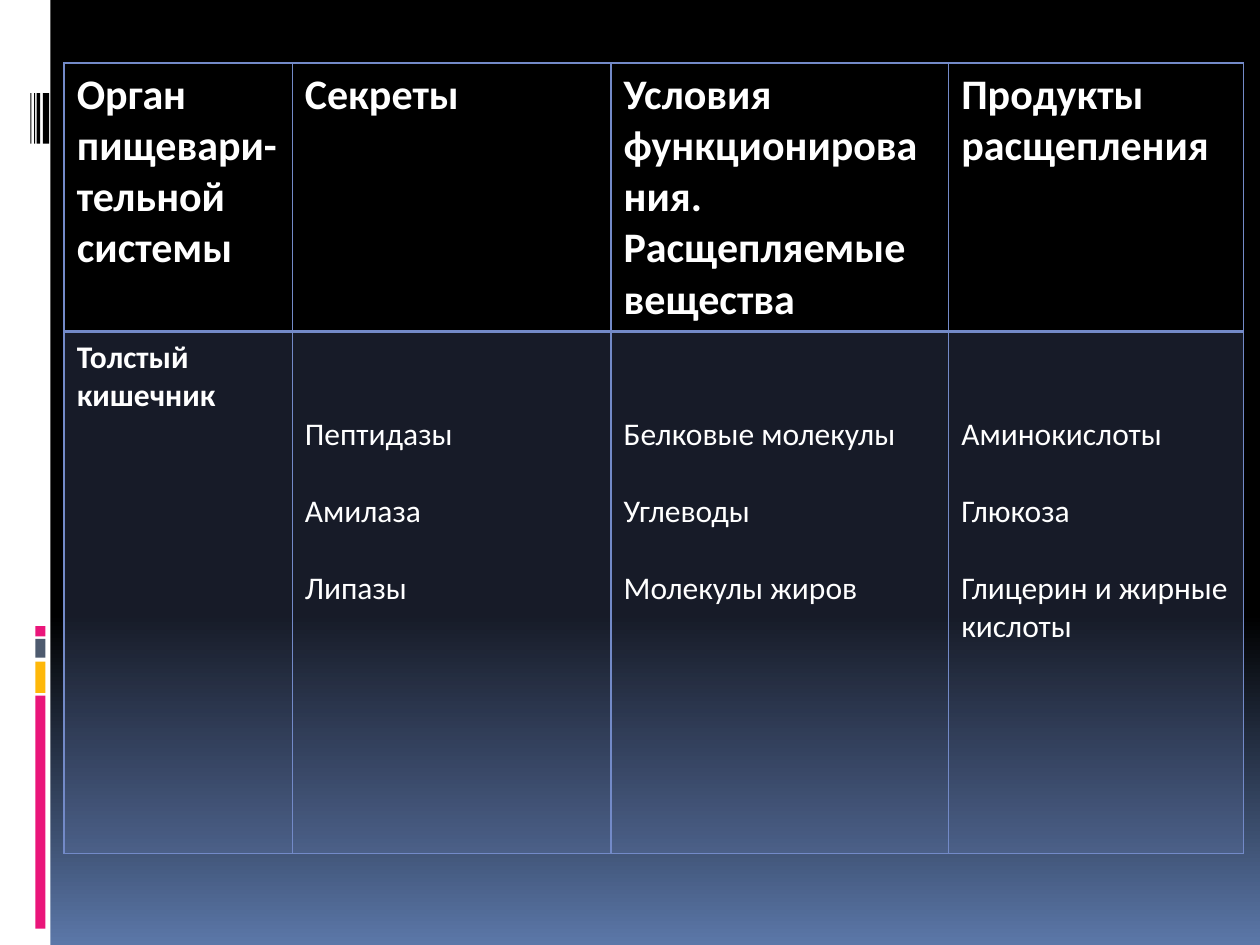
from lxml import etree
from pptx import Presentation
from pptx import util as u
from pptx.dml.color import RGBColor
from pptx.enum import shapes
from pptx.oxml import ns

COLORS = {"white": "FFFFFF", "black": "000000", "pink": "EA157A", "amber": "FEB80A",
          "slate": "4E5B6F", "sky": "5B77A8", "table": "738AC8"}
FONT = "Calibri"
HEADER_SIZE, BODY_SIZE = 24, 18
BODY_LINE = 22  # points taken by one line of body text

STRIPES = [("pink", 55.2, 18.5), ("amber", 52.5, 2.5), ("slate", 50.7, 1.5), ("pink", 49.7, 0.8)]
BARCODE = [(3.4, 0.5), (2.9, 0.3), (2.7, 0.1), (2.4, 0.1)]
COLUMNS = [18.1, 25.3, 26.8, 23.4]
ROWS = [21.3, 41.4]
HEADERS = [["Орган пищевари-", "тельной системы"], ["Секреты"],
           ["Условия функционирования. Расщепляемые вещества"], ["Продукты расщепления"]]
ORGAN = ["Толстый кишечник"]
DIGESTION = [["Пептидазы", "Амилаза", "Липазы"],
             ["Белковые молекулы", "Углеводы", "Молекулы жиров"],
             ["Аминокислоты", "Глюкоза", "Глицерин и жирные кислоты"]]


def rgb(name):
    return RGBColor.from_string(COLORS[name])


class Deck:
    """Draws on a grid of 100 columns by 75 rows."""

    def __init__(self):
        self.presentation = Presentation()
        self.presentation.slide_width = u.Inches(10)
        self.presentation.slide_height = u.Inches(7.5)
        self.unit = self.presentation.slide_width / 100
        self.slide = self.presentation.slides.add_slide(self.presentation.slide_layouts[6])

    def grid(self, *lengths):
        return [round(length * self.unit) for length in lengths]

    def background(self, top, bottom, start):
        fill = self.slide.background.fill
        fill.gradient()
        fill.gradient_angle = 270
        for stop, color, position in zip(fill.gradient_stops, (top, bottom), (start, 1)):
            stop.color.rgb = rgb(color)
            stop.position = position

    def block(self, color, left, top, width, height):
        shape = self.slide.shapes.add_shape(shapes.MSO_SHAPE.RECTANGLE,
                                            *self.grid(left, top, width, height))
        shape.shadow.inherit = False
        shape.fill.solid()
        shape.fill.fore_color.rgb = rgb(color)
        shape.line.fill.background()

    def table(self, left, top, columns, rows):
        frame = self.slide.shapes.add_table(len(rows), len(columns),
                                            *self.grid(left, top, sum(columns), sum(rows)))
        table = frame.table
        table.first_row = table.horz_banding = False
        for column, width in zip(table.columns, self.grid(*columns)):
            column.width = width
        for row, height in zip(table.rows, self.grid(*rows)):
            row.height = height
        return table

    def borders(self, cell, **widths):
        """Set the width in points of each side, named L, R, T or B."""
        properties = cell._tc.get_or_add_tcPr()
        for side, width in widths.items():
            line = etree.SubElement(properties, ns.qn(f"a:ln{side}"), w=str(u.Pt(width)))
            fill = etree.SubElement(line, ns.qn("a:solidFill"))
            etree.SubElement(fill, ns.qn("a:srgbClr"), val=COLORS["table"])

    def tint(self, cell, color, percent):
        cell.fill.solid()
        cell.fill.fore_color.rgb = rgb(color)
        solid = cell._tc.tcPr.find(ns.qn("a:solidFill"))
        etree.SubElement(solid[0], ns.qn("a:alpha"), val=str(percent * 1000))

    def cell_text(self, cell, lines, size, bold, gap=0):
        frame = cell.text_frame
        frame.text = "\n".join(lines)
        for index, paragraph in enumerate(frame.paragraphs):
            paragraph.space_before = u.Pt(gap if index else 0)
            font = paragraph.font
            font.name, font.size, font.bold = FONT, u.Pt(size), bold
            font.color.rgb = rgb("white")


def main():
    deck = Deck()
    deck.background("black", "sky", 0.65)
    deck.block("white", 0, 0, 4, 75)
    for color, top, height in STRIPES:
        deck.block(color, 2.8, top, 0.8, height)
    for left, width in BARCODE:
        deck.block("black", left, 7.4, width, 4)

    table = deck.table(5.1, 5, COLUMNS, ROWS)
    for column, lines in enumerate(HEADERS):
        cell = table.cell(0, column)
        deck.borders(cell, L=1, R=1, T=1, B=2)
        cell.fill.background()
        deck.cell_text(cell, lines, HEADER_SIZE, True)
    for column, lines in enumerate([ORGAN] + DIGESTION):
        cell = table.cell(1, column)
        deck.borders(cell, L=1, R=1, T=2, B=1)
        deck.tint(cell, "table", 20)
        deck.cell_text(cell, lines, BODY_SIZE, column == 0, BODY_LINE)
        if column:
            cell.margin_top = u.Inches(0.05) + u.Pt(2 * BODY_LINE)

    deck.presentation.save("out.pptx")


if __name__ == "__main__":
    main()
